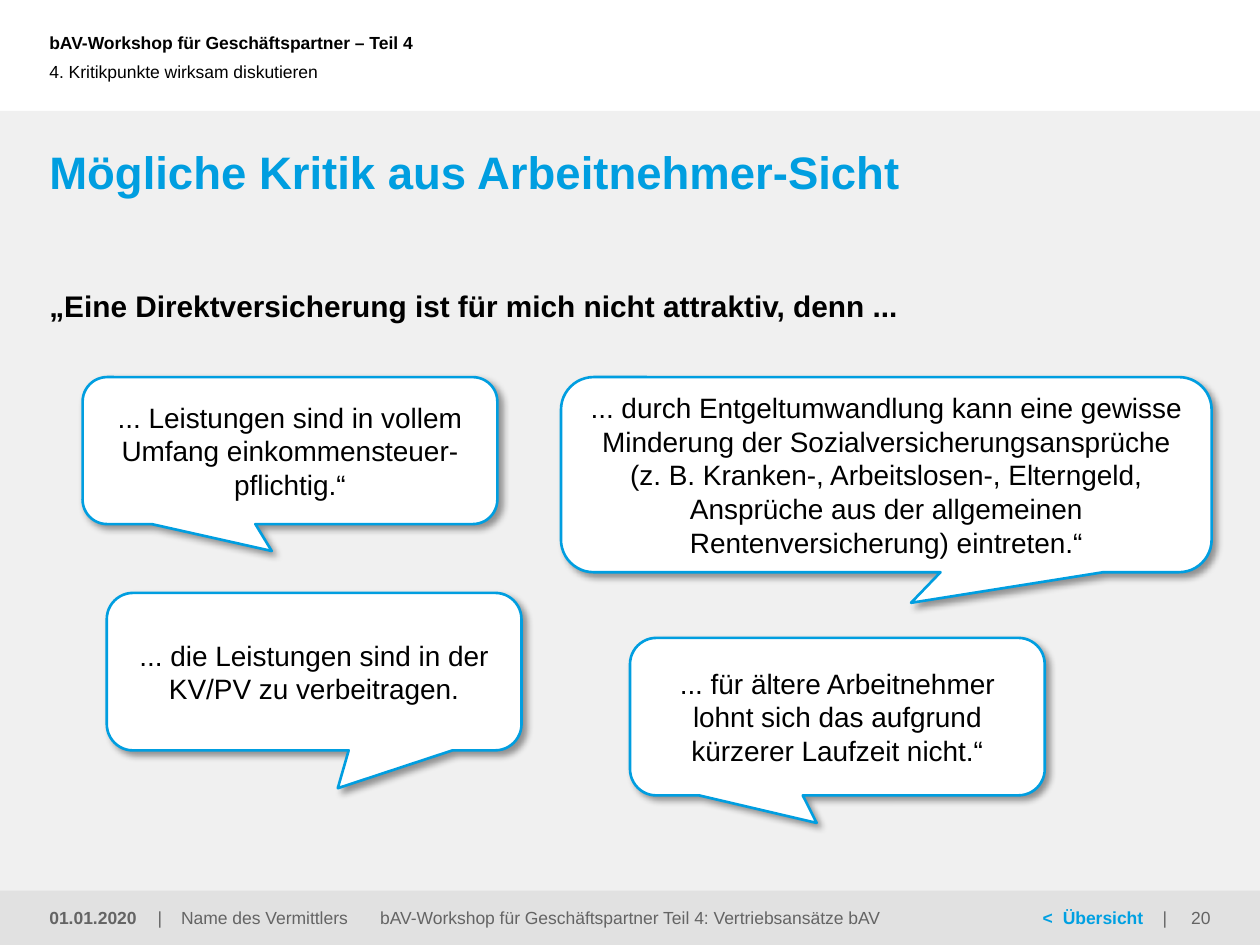
import pptx
import pptx.dml.color
import pptx.enum.shapes
import pptx.enum.text
import pptx.oxml
import pptx.oxml.ns
import pptx.util
from dataclasses import dataclass

Pt = pptx.util.Pt
ALIGN = pptx.enum.text.PP_ALIGN
ANCHOR = pptx.enum.text.MSO_ANCHOR
SHAPE = pptx.enum.shapes.MSO_SHAPE


@dataclass(frozen=True)
class Theme:
    font: str = "Arial"
    white: str = "FFFFFF"
    black: str = "000000"
    grey: str = "646464"
    panel: str = "F0F0F0"
    footer: str = "E1E1E1"
    blue: str = "009EE0"
    link: str = "00A0E1"
    small: float = 10
    callout: float = 16
    lead: float = 17
    title: float = 26


def rgb(value):
    return pptx.dml.color.RGBColor.from_string(value)


def apply(target, formats):
    for name, value in formats.items():
        setattr(target, name, value)


class SlideBuilder:
    def __init__(self, slide, theme):
        self.slide = slide
        self.theme = theme

    def fill_frame(self, frame, runs, size, insets, anchor, align, after=0, tabs=()):
        """Fill a frame with one paragraph; runs are (text, colour, bold)."""
        left, top, right, bottom = insets
        apply(frame, {
            "word_wrap": True, "vertical_anchor": anchor,
            "margin_left": Pt(left), "margin_top": Pt(top),
            "margin_right": Pt(right), "margin_bottom": Pt(bottom),
        })
        paragraph = frame.paragraphs[0]
        apply(paragraph, {"alignment": align, "space_after": Pt(after)})
        if tabs:
            properties = paragraph._p.get_or_add_pPr()
            stops = "".join(f'<a:tab pos="{Pt(pos)}" algn="l"/>' for pos in tabs)
            properties.append(pptx.oxml.parse_xml(
                f'<a:tabLst {pptx.oxml.ns.nsdecls("a")}>{stops}</a:tabLst>'))
        for text, color, bold in runs:
            run = paragraph.add_run()
            run.text = text
            apply(run.font, {"name": self.theme.font, "size": Pt(size), "bold": bold})
            run.font.color.rgb = rgb(color)

    def text(self, box, runs, size, insets=(0, 0, 0, 0), anchor=ANCHOR.MIDDLE,
             align=ALIGN.LEFT, **spacing):
        frame = self.slide.shapes.add_textbox(*map(Pt, box)).text_frame
        self.fill_frame(frame, runs, size, insets, anchor, align, **spacing)

    def shape(self, kind, box, fill):
        shape = self.slide.shapes.add_shape(kind, *map(Pt, box))
        shape.shadow.inherit = False
        shape.fill.solid()
        shape.fill.fore_color.rgb = rgb(fill)
        return shape

    def band(self, box, fill):
        self.shape(SHAPE.RECTANGLE, box, fill).line.fill.background()

    def callout(self, box, tip, text):
        theme = self.theme
        bubble = self.shape(SHAPE.ROUNDED_RECTANGULAR_CALLOUT, box, theme.white)
        bubble.line.color.rgb = rgb(theme.blue)
        bubble.line.width = Pt(1.5)
        for index, value in enumerate((*tip, 0.167)):
            bubble.adjustments[index] = value
        effects = bubble._element.spPr.find(pptx.oxml.ns.qn("a:effectLst"))
        effects.append(pptx.oxml.parse_xml(
            f'<a:outerShdw {pptx.oxml.ns.nsdecls("a")} blurRad="{Pt(4)}" '
            f'dist="{Pt(3)}" dir="2700000" algn="tl" rotWithShape="0">'
            f'<a:srgbClr val="{theme.black}"><a:alpha val="40000"/></a:srgbClr>'
            '</a:outerShdw>'))
        self.fill_frame(bubble.text_frame, [(text, theme.black, False)], theme.callout,
                        (7.2, 3.6, 7.2, 3.6), ANCHOR.MIDDLE, ALIGN.CENTER)


def main():
    theme = Theme()
    deck = pptx.Presentation()
    width, height = 720, 540
    apply(deck, {"slide_width": Pt(width), "slide_height": Pt(height)})
    builder = SlideBuilder(deck.slides.add_slide(deck.slide_layouts[6]), theme)

    margin = 28.2
    content_width = width - 2 * margin
    panel_top, footer_top = 63.4, 509
    footer_height = height - footer_top

    # Background bands
    builder.band((0, panel_top, width, height - panel_top), theme.panel)
    builder.band((0, footer_top, width, footer_height), theme.footer)

    # Header
    builder.text((0, 0, 502.6, 48.2),
                 [("bAV-Workshop für Geschäftspartner – Teil 4", theme.black, True)],
                 theme.small, (margin, 3.6, 7.2, 3.6))
    builder.text((0, 18, 514.8, 45.4),
                 [("4. Kritikpunkte wirksam diskutieren", theme.black, False)],
                 theme.small, (margin, 0, 0, 0), after=12)

    # Title and lead-in
    builder.text((margin, 82, content_width, 39.6),
                 [("Mögliche Kritik aus Arbeitnehmer-Sicht", theme.blue, True)],
                 theme.title, anchor=ANCHOR.TOP)
    builder.text((margin, 164.2, content_width, 21),
                 [("„Eine Direktversicherung ist für mich nicht attraktiv, denn ...",
                   theme.black, True)],
                 theme.lead, anchor=ANCHOR.TOP, after=12)

    # Objections: box, tip of the pointer, wording
    objections = [
        ((47.2, 215.5, 237, 84), (-0.044, 0.683),
         "... Leistungen sind in vollem Umfang einkommensteuer-pflichtig.“"),
        ((320.6, 215.5, 371.8, 111.5), (0.038, 0.657),
         "... durch Entgeltumwandlung kann eine gewisse Minderung der "
         "Sozialversicherungsansprüche (z. B. Kranken-, Arbeitslosen-, Elterngeld, "
         "Ansprüche aus der allgemeinen Rentenversicherung) eintreten.“"),
        ((61, 338.8, 237, 90), (0.057, 0.74),
         "... die Leistungen sind in der KV/PV zu verbeitragen."),
        ((360, 364.5, 237, 90), (-0.05, 0.675),
         "... für ältere Arbeitnehmer lohnt sich das aufgrund kürzerer "
         "Laufzeit nicht.“"),
    ]
    for objection in objections:
        builder.callout(*objection)

    # Footer: left, width, runs, further format
    footer = [
        (0, 87.8, [("01.01.2020", theme.grey, True)],
         {"insets": (margin, 3.6, 7.2, 3.6)}),
        (90, 174.2, [("|\tName des Vermittlers", theme.grey, False)],
         {"tabs": (13.5,)}),
        (205.2, 309.6,
         [("bAV-Workshop für Geschäftspartner Teil 4: Vertriebsansätze bAV",
           theme.grey, False)], {"align": ALIGN.CENTER}),
        (495.4, 174.2,
         [("<\tÜbersicht", theme.link, True), ("\t|", theme.grey, False)],
         {"insets": (100.4, 0, 0, 0), "tabs": (11.5, 68.5)}),
        (652.3, 67.7, [("20", theme.grey, False)],
         {"insets": (7.2, 3.6, margin, 3.6), "align": ALIGN.RIGHT}),
    ]
    for left, part_width, runs, formats in footer:
        builder.text((left, footer_top, part_width, footer_height), runs,
                     theme.small, **formats)

    deck.save("out.pptx")


if __name__ == "__main__":
    main()
